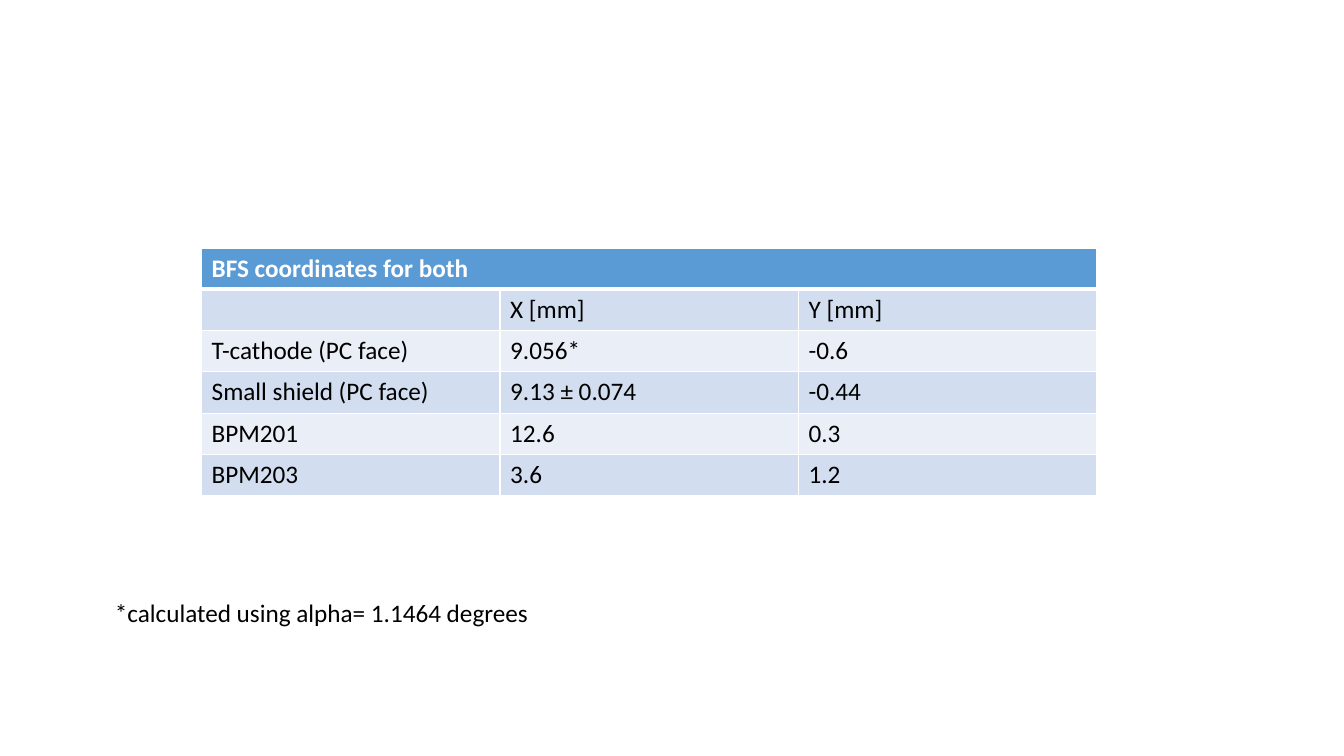
from dataclasses import dataclass

from lxml.etree import SubElement
from pptx import Presentation
from pptx.dml.color import RGBColor
from pptx.enum.text import MSO_AUTO_SIZE
from pptx.oxml.ns import qn
from pptx.util import Inches, Pt


@dataclass(frozen=True)
class Theme:
    """Colours and type sizes of the slide."""
    font: str = "Calibri"
    size: int = 18
    text: str = "000000"
    header_text: str = "FFFFFF"
    header_fill: str = "5B9BD5"
    bands: tuple = ("D2DEEF", "EAEFF7")
    border: str = "FFFFFF"
    thin: int = 1
    thick: int = 3


THEME = Theme()
HEADING = "BFS coordinates for both"
COORDINATES = [
    ("", "X [mm]", "Y [mm]"),
    ("T-cathode (PC face)", "9.056*", "-0.6"),
    ("Small shield (PC face)", "9.13 ± 0.074", "-0.44"),
    ("BPM201", "12.6", "0.3"),
    ("BPM203", "3.6", "1.2"),
]
FOOTNOTE = "*calculated using alpha= 1.1464 degrees"


def write(frame, text, colour, bold=False):
    """Put one styled paragraph into a text frame."""
    paragraph = frame.paragraphs[0]
    if text:
        paragraph.text = text
    font = paragraph.font
    font.name = THEME.font
    font.size = Pt(THEME.size)
    font.bold = bold
    font.color.rgb = RGBColor.from_string(colour)


def add_borders(cell, top, bottom):
    """Draw the four borders of a cell, with widths in points."""
    properties = cell._tc.get_or_add_tcPr()
    widths = {"a:lnL": THEME.thin, "a:lnR": THEME.thin, "a:lnT": top, "a:lnB": bottom}
    for side, width in widths.items():
        line = SubElement(properties, qn(side), w=str(Pt(width)))
        fill = SubElement(line, qn("a:solidFill"))
        SubElement(fill, qn("a:srgbClr"), val=THEME.border)


def add_coordinates(slide, left, top, column_width, row_height):
    """Add the banded coordinate table under its merged heading."""
    rows = [(HEADING, "", ""), *COORDINATES]
    columns = len(rows[0])
    table = slide.shapes.add_table(
        len(rows), columns, left, top, column_width * columns, row_height * len(rows)
    ).table
    for index, values in enumerate(rows):
        table.rows[index].height = row_height
        is_header = index == 0
        fill = THEME.header_fill if is_header else THEME.bands[(index - 1) % 2]
        colour = THEME.header_text if is_header else THEME.text
        above = THEME.thick if index == 1 else THEME.thin
        below = THEME.thick if is_header else THEME.thin
        for column, value in enumerate(values):
            cell = table.cell(index, column)
            add_borders(cell, above, below)
            cell.fill.solid()
            cell.fill.fore_color.rgb = RGBColor.from_string(fill)
            write(cell.text_frame, value, colour, is_header)
    table.cell(0, 0).merge(table.cell(0, columns - 1))


def add_footnote(slide, left, top, width, height):
    """Add the single-line note below the table."""
    frame = slide.shapes.add_textbox(left, top, width, height).text_frame
    frame.word_wrap = False
    frame.auto_size = MSO_AUTO_SIZE.SHAPE_TO_FIT_TEXT
    write(frame, FOOTNOTE, THEME.text)


def main():
    """Build and save the slide."""
    presentation = Presentation()
    presentation.slide_width = Inches(13.33)
    presentation.slide_height = Inches(7.5)
    slide = presentation.slides.add_slide(presentation.slide_layouts[6])
    add_coordinates(slide, Inches(2), Inches(2.46), Inches(2.96), Inches(0.41))
    add_footnote(slide, Inches(1.04), Inches(5.88), Inches(4.35), Inches(0.4))
    presentation.save("out.pptx")


if __name__ == "__main__":
    main()
